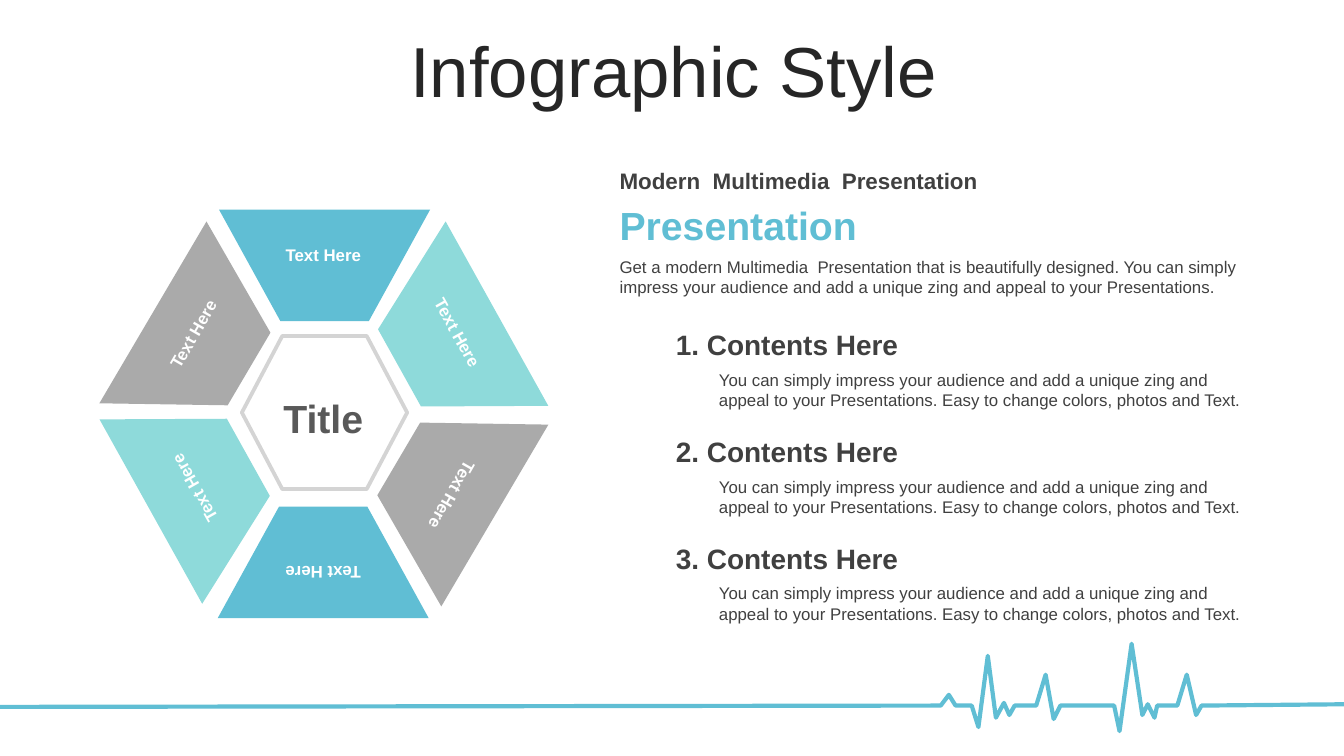
from pptx import Presentation
from pptx.dml.color import RGBColor
from pptx.enum.shapes import MSO_SHAPE as Shape
from pptx.enum.text import MSO_ANCHOR as Anchor, MSO_AUTO_SIZE as Fit, PP_ALIGN as Align
from pptx.util import Inches, Pt

COL = Inches(0.1)
BLUE, MINT, GRAY, DARK, WHITE = "60BED4", "8EDADA", "AAAAAA", "404040", "FFFFFF"
TIGHT = (0.07, 0.04)

WEDGES = [
    (16.3, 15.6, 180, 0.55, BLUE),
    (7, 31.9, 60.9, 0.55, MINT),
    (7.1, 21.2, 120.5, 0.568, GRAY),
    (16.2, 37.7, 0, 0.55, BLUE),
    (25.5, 21.2, 240.9, 0.55, MINT),
    (25.4, 32.1, 300.5, 0.568, GRAY),
]
LABELS = [
    (18.3, 17.8, 0),
    (28.3, 23.6, 61),
    (27.9, 35.7, 119.7),
    (18.3, 41.5, 180),
    (8.7, 35.2, 240.4),
    (8.6, 23.7, 299.9),
]
PULSE = [
    (100, 52.4), (89.4, 52.5), (89, 53.2), (88.3, 50.2), (87.6, 52.5), (86.1, 52.5),
    (85.9, 53.4), (85.4, 52.4), (85, 53.2), (84.2, 47.9), (83.3, 54.4), (82.9, 52.5),
    (78.9, 52.5), (78.4, 53.5), (77.8, 50.2), (77.1, 52.5), (75.5, 52.5), (75.1, 53.2),
    (74.7, 52.3), (74.1, 53.4), (73.5, 48.8), (72.8, 54.1), (72.3, 52.5), (71.1, 52.5),
    (70.6, 51.7), (70, 52.5), (-0.2, 52.6),
]
INTRO = ("Get a modern Multimedia  Presentation that is beautifully designed. "
         "You can simply impress your audience and add a unique zing and appeal "
         "to your Presentations.")
DETAIL = ("You can simply impress your audience and add a unique zing and appeal "
          "to your Presentations. Easy to change colors, photos and Text.")


def color(value):
    return RGBColor.from_string(value)


def grid(*cells):
    return [round(c * COL) for c in cells]


def write(tf, text, size=9, fill=DARK, bold=False, align=Align.LEFT,
          insets=TIGHT, anchor=Anchor.TOP, fit=Fit.SHAPE_TO_FIT_TEXT):
    tf.word_wrap = True
    tf.auto_size = fit
    tf.vertical_anchor = anchor
    tf.margin_left = tf.margin_right = Inches(insets[0])
    tf.margin_top = tf.margin_bottom = Inches(insets[1])
    p = tf.paragraphs[0]
    p.alignment = align
    r = p.add_run()
    r.text = text
    r.font.name = "Arial"
    r.font.size = Pt(size)
    r.font.bold = bold
    r.font.color.rgb = color(fill)
    return p


def add_text(shapes, cells, text, rotation=0, **style):
    sp = shapes.add_textbox(*grid(*cells))
    sp.rotation = rotation
    write(sp.text_frame, text, **style)


def add_block(s, kind, cells, adjust, fill, rotation=0, line=None):
    sp = s.shapes.add_shape(kind, *grid(*cells))
    sp.shadow.inherit = False
    sp.adjustments[0] = adjust
    sp.rotation = rotation
    sp.fill.solid()
    sp.fill.fore_color.rgb = color(fill)
    if line:
        sp.line.color.rgb = color(line)
        sp.line.width = Pt(2)
    else:
        sp.line.fill.background()


def add_pulse(s):
    points = [(round(x * 10), round(y * 10)) for x, y in PULSE]
    builder = s.shapes.build_freeform(*points[0], scale=COL / 10)
    builder.add_line_segments(points[1:], close=False)
    sp = builder.convert_to_shape()
    sp.shadow.inherit = False
    sp.fill.background()
    sp.line.color.rgb = color(BLUE)
    sp.line.width = Pt(2.25)


def add_title(s, text):
    sp = s.shapes.title
    sp.left, sp.top, sp.width, sp.height = grid(2.7, 2.8, 94.9, 5.9)
    p = write(sp.text_frame, text, size=37.9, fill="262626", align=Align.CENTER,
              anchor=Anchor.MIDDLE, fit=Fit.NONE)
    p.line_spacing = 0.8
    p.space_before = Pt(7.5)


def add_wheel(s):
    for x, y, rotation, adjust, fill in WEDGES:
        add_block(s, Shape.TRAPEZOID, (x, y, 15.7, 8.3), adjust, fill, rotation)
    add_block(s, Shape.HEXAGON, (18, 25, 12.3, 11.4), 0.264, WHITE, line="D4D4D4")
    for x, y, rotation in LABELS:
        add_text(s.shapes, (x, y, 11.5, 2.3), "Text Here", rotation,
                 fill=WHITE, bold=True, align=Align.CENTER)
    add_text(s.shapes, (18.3, 28.9, 11.5, 4.3), "Title", size=21, fill="595959",
             bold=True, align=Align.CENTER)


def add_item(s, number):
    top = 23.9 + (number - 1) * 7.95
    shapes = s.shapes.add_group_shape().shapes
    add_text(shapes, (52.7, top + 3.1, 41, 4), DETAIL, insets=(0.08, 0.05))
    add_text(shapes, (49.3, top, 44.5, 3.5), f"{number}. Contents Here",
             size=15, bold=True, insets=(0.1, 0.05))


def add_intro(s):
    add_text(s.shapes, (45.4, 14.6, 48.3, 4.3), "Presentation", size=21, fill=BLUE, bold=True)
    add_text(s.shapes, (45.4, 12, 48.3, 2.8), "Modern  Multimedia  Presentation",
             size=12, bold=True)
    add_text(s.shapes, (45.4, 18.7, 48.3, 3.8), INTRO)


def main():
    prs = Presentation()
    prs.slide_width, prs.slide_height = grid(100, 56.25)
    s = prs.slides.add_slide(prs.slide_layouts[5])
    add_pulse(s)
    add_title(s, "Infographic Style")
    add_wheel(s)
    for number in range(1, 4):
        add_item(s, number)
    add_intro(s)
    prs.save("out.pptx")


if __name__ == "__main__":
    main()
